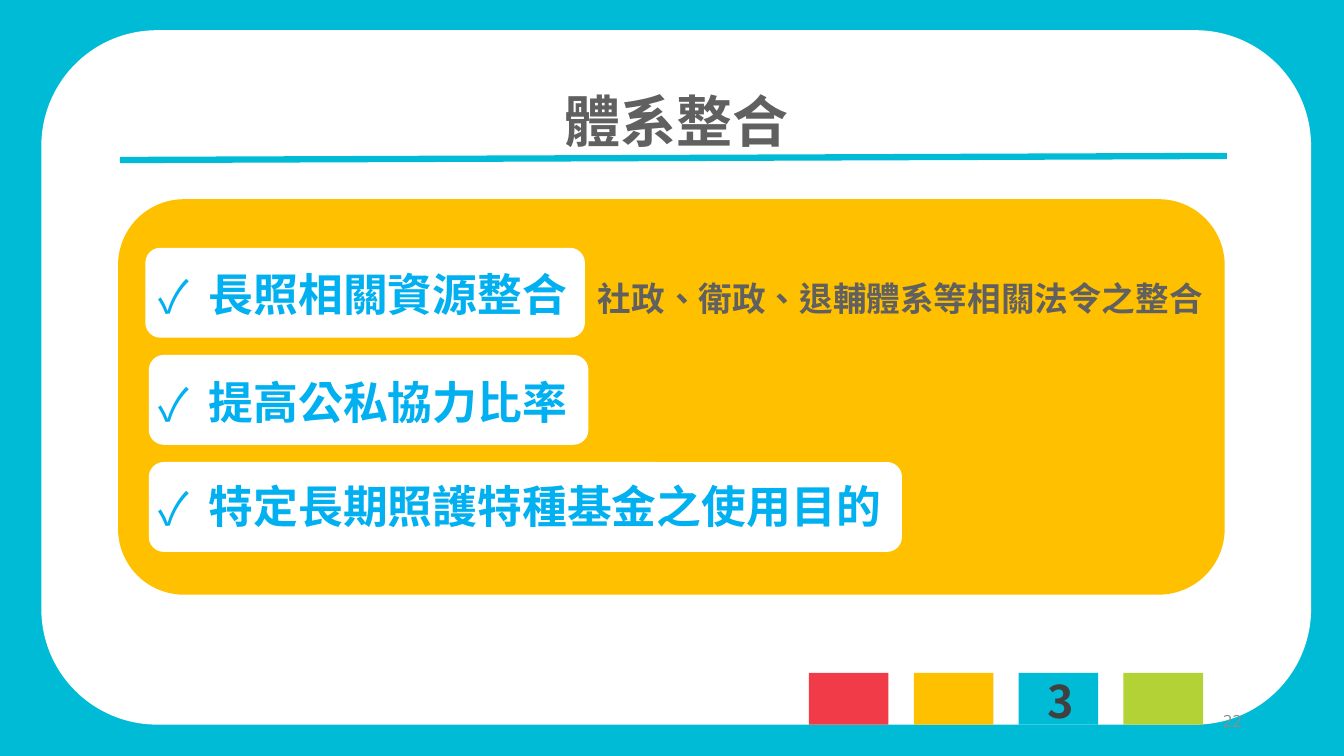
import pptx
import pptx.dml.color
import pptx.enum.shapes
import pptx.enum.text
import pptx.oxml.ns
import pptx.util
from lxml import etree

Pt = pptx.util.Pt
RGBColor = pptx.dml.color.RGBColor
SHAPE = pptx.enum.shapes.MSO_SHAPE
ALIGN = pptx.enum.text.PP_ALIGN
ANCHOR = pptx.enum.text.MSO_ANCHOR
qn = pptx.oxml.ns.qn

CYAN = RGBColor(0x00, 0xBB, 0xD6)
WHITE = RGBColor(0xFF, 0xFF, 0xFF)
RED = RGBColor(0xF2, 0x3B, 0x49)
AMBER = RGBColor(0xFF, 0xC0, 0x00)
GREEN = RGBColor(0xB3, 0xD2, 0x36)
SKY = RGBColor(0x00, 0xB0, 0xF0)
GREY = RGBColor(0x60, 0x60, 0x60)
DARK = RGBColor(0x40, 0x40, 0x40)
PALE = RGBColor(0x8C, 0x8C, 0x8C)

CJK = "Noto Sans CJK SC"
TITLE = {"size": Pt(40), "bold": True, "name": CJK, "color": GREY}
ITEM = {"size": Pt(32), "bold": True, "name": CJK, "color": SKY}
NOTE = {"size": Pt(24), "bold": True, "name": CJK, "color": GREY}
SECTION = {"size": Pt(32), "bold": True, "name": CJK, "color": DARK}
NUMBER = {"size": Pt(12), "bold": False, "name": "Open Sans", "color": PALE}

INDENT = Pt(36)
NOTE_TAB = Pt(314)


def add_span(para, text, style):
    """Add a run of text with the given format values."""
    span = para.add_run()
    span.text = text
    for name, value in style.items():
        if name == "color":
            span.font.color.rgb = value
        else:
            setattr(span.font, name, value)
    properties = span.font._element
    properties.set("lang", "zh-TW")
    etree.SubElement(properties, qn("a:ea")).set("typeface", style["name"])


def add_block(page, kind, frame, color):
    """Add a filled shape without outline or shadow."""
    block = page.shapes.add_shape(kind, *map(Pt, frame))
    block.shadow.inherit = False
    block.fill.solid()
    block.fill.fore_color.rgb = color
    block.line.fill.background()


def add_box(page, frame, align=ALIGN.LEFT, anchor=ANCHOR.TOP):
    """Add a wrapping text box and return its first paragraph."""
    box = page.shapes.add_textbox(*map(Pt, frame))
    box.text_frame.word_wrap = True
    box.text_frame.vertical_anchor = anchor
    para = box.text_frame.paragraphs[0]
    para.alignment = align
    return para


def add_item(page, frame, text, note=""):
    """Add a check-marked item, with an optional tabbed note."""
    para = add_box(page, frame)
    properties = para._p.get_or_add_pPr()
    properties.set("marL", str(INDENT))
    properties.set("indent", str(-INDENT))
    etree.SubElement(properties, qn("a:buFont")).set("typeface", CJK)
    etree.SubElement(properties, qn("a:buChar")).set("char", "✓")
    if note:
        tabs = etree.SubElement(properties, qn("a:tabLst"))
        tab = etree.SubElement(tabs, qn("a:tab"))
        tab.set("pos", str(NOTE_TAB))
        tab.set("algn", "l")
    add_span(para, text, ITEM)
    if note:
        add_span(para, "\t" + note, NOTE)


def add_title(page, frame, text):
    """Place and format the title placeholder in front of earlier shapes."""
    title = page.shapes.title
    title._element.getparent().append(title._element)
    title.left, title.top, title.width, title.height = map(Pt, frame)
    title.text_frame.vertical_anchor = ANCHOR.MIDDLE
    para = title.text_frame.paragraphs[0]
    para.alignment = ALIGN.CENTER
    add_span(para, text, TITLE)


def add_rule(page, ends, color, weight):
    """Add a straight line without shadow."""
    rule = page.shapes.add_connector(
        pptx.enum.shapes.MSO_CONNECTOR.STRAIGHT, *map(Pt, ends))
    rule.line.color.rgb = color
    rule.line.width = Pt(weight)
    etree.SubElement(rule._element.spPr, qn("a:effectLst"))


def main():
    """Build the slide and save it."""
    deck = pptx.Presentation()
    deck.slide_width, deck.slide_height = Pt(960), Pt(540)
    page = deck.slides.add_slide(deck.slide_layouts.get_by_name("Title Only"))
    page.background.fill.solid()
    page.background.fill.fore_color.rgb = CYAN

    add_block(page, SHAPE.ROUNDED_RECTANGLE, (29.5, 21.6, 907, 496), WHITE)
    add_title(page, (116, 58.3, 734, 55.4), "體系整合")
    add_rule(page, (85.7, 114.3, 876.3, 111.4), CYAN, 4.5)

    for index, color in enumerate((RED, AMBER, CYAN, GREEN)):
        frame = (577.8 + 74.9 * index, 480.6, 56.9, 37)
        add_block(page, SHAPE.RECTANGLE, frame, color)
    add_span(add_box(page, (740.9, 477.4, 32.4, 46)), "3", SECTION)

    add_block(page, SHAPE.ROUNDED_RECTANGLE, (84.3, 142.3, 790.5, 282.5), AMBER)
    items = (
        (103.8, 177, 314, 187.2, 765, "長照相關資源整合",
         "社政、衛政、退輔體系等相關法令之整合"),
        (106.3, 253.5, 314, 264.2, 314, "提高公私協力比率", ""),
        (106.3, 330, 538, 338.4, 593, "特定長期照護特種基金之使用目的", ""),
    )
    for left, top, width, text_top, text_width, text, note in items:
        add_block(page, SHAPE.ROUNDED_RECTANGLE, (left, top, width, 64.2), WHITE)
        add_item(page, (106, text_top, text_width, 46), text, note)

    number = add_box(page, (678.3, 500.5, 216, 28.8), ALIGN.RIGHT, ANCHOR.MIDDLE)
    add_span(number, "22", NUMBER)
    deck.save("out.pptx")


if __name__ == "__main__":
    main()
